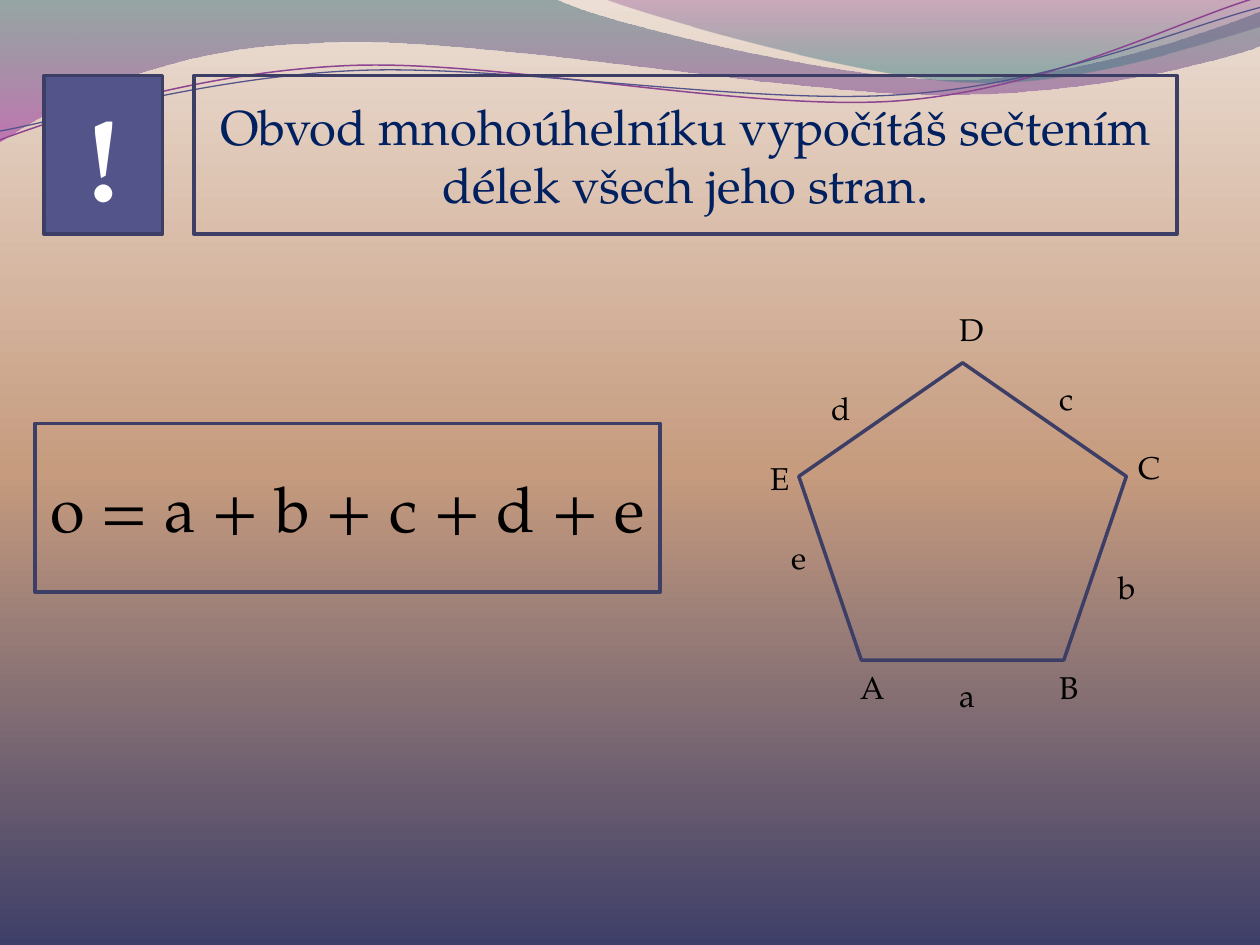
import math

from lxml import etree
from pptx import Presentation
from pptx import util as u
from pptx.dml.color import RGBColor
from pptx.enum import shapes, text
from pptx.oxml.ns import qn

THEME = {
    "font": "TeX Gyre Pagella",
    "accent": "53548A", "edge": "3D3E66", "orchid": "8D4490",
    "white": "FFFFFF", "navy": "002060", "black": "000000",
    "mark": 66, "rule": 28, "formula": 36, "label": 18, "outline": 2,
    "sky": [(0, "ECDED4", 100), (50, "C69B7E", 100), (100, "3E3F68", 100)],
    "wide_wave": [(0, "2D6368", 45), (100, "A530A9", 55)],
    "top_wave": [(0, "7F2F82", 30), (80, "2F7B82", 45)],
}

prs = Presentation()
prs.slide_width, prs.slide_height = u.Inches(10), u.Inches(7.5)
CELL = prs.slide_width / 10  # the slide is a grid of 10 columns by 7.5 rows
s = prs.slides.add_slide(prs.slide_layouts[6])


def set_gradient(fill, owner, stops):
    """Fill from top to bottom with (position %, colour, opacity %) stops."""
    fill.gradient()
    fill.gradient_angle = 270
    stop_list = owner.find(".//" + qn("a:gsLst"))
    for old in list(stop_list):
        stop_list.remove(old)
    for pos, colour, opacity in stops:
        gs = etree.SubElement(stop_list, qn("a:gs"), pos=str(pos * 1000))
        clr = etree.SubElement(gs, qn("a:srgbClr"), val=colour)
        if opacity < 100:
            etree.SubElement(clr, qn("a:alpha"), val=str(opacity * 1000))


def write(sp, words, size, colour, **formats):
    tf = sp.text_frame
    tf.word_wrap = True
    p = tf.paragraphs[0]
    for name, value in formats.items():
        setattr(tf if name == "vertical_anchor" else p, name, value)
    r = p.add_run()
    r.text = words
    font = {"name": THEME["font"], "size": u.Pt(THEME[size]), "bold": size == "mark"}
    for name, value in font.items():
        setattr(r.font, name, value)
    r.font.color.rgb = RGBColor.from_string(THEME[colour])


set_gradient(s.background.fill, s.element, THEME["sky"])

# Waves: style, line width, tilt and its centre, start point, then
# line ends (x, y) or curves (x1, y1, x2, y2, x, y)
TILT = -2.7
waves = [
    ("wide_wave", None, 0, (0, 0), (0, 0), [
        (4.4, -0.01), (4.76, 0.17, 6.64, 0.63, 7.58, 0.63),
        (8.53, 0.63, 9.58, 0.26, 10, 0.09), (10.01, 0.36),
        (9.83, 0.44, 8.7, 0.76, 7.46, 0.75), (6.22, 0.75, 3.82, 0.28, 2.57, 0.34),
        (1.29, 0.36, 0.46, 0.83, -0.01, 1.13), (0, 0)]),
    ("top_wave", None, 0, (0, 0), (4.79, -0.01), [
        (5.09, 0.11, 6.82, 0.62, 7.69, 0.65), (8.56, 0.69, 9.61, 0.32, 10, 0.21),
        (10, 0), (4.79, -0.01)]),
    ("orchid", 0.85, TILT, (4.99, 0.58), (0, 1.11), [
        (0.48, 0.93, 1.58, 0.57, 2.77, 0.52), (3.95, 0.47, 5.93, 0.89, 7.13, 0.8),
        (8.33, 0.71, 9.38, 0.15, 9.98, -0.02)]),
    ("accent", 0.75, TILT, (5, 0.59), (0, 1.04), [
        (0.47, 0.96, 1.64, 0.61, 2.83, 0.56), (4.03, 0.51, 5.97, 0.84, 7.17, 0.75),
        (8.36, 0.67, 9.41, 0.21, 10, 0.06)]),
]
for style, line_width, tilt, (cx, cy), start, segments in waves:
    points = [start]
    for seg in segments:
        points += zip(seg[::2], seg[1::2])
    cos, sin = math.cos(math.radians(-tilt)), math.sin(math.radians(-tilt))
    emu = [(round(CELL * (cx + (x - cx) * cos - (y - cy) * sin)),
            round(CELL * (cy + (x - cx) * sin + (y - cy) * cos))) for x, y in points]
    builder = s.shapes.build_freeform(*emu[0])
    builder.add_line_segments(emu[1:], close=line_width is None)
    sp = builder.convert_to_shape()
    sp.shadow.inherit = False
    sp.rotation = tilt

    # Join the three points of each curve into one Bezier segment
    ends = iter(sp.element.findall(".//" + qn("a:lnTo")))
    for seg in segments:
        first = next(ends)
        if len(seg) == 6:
            first.tag = qn("a:cubicBezTo")
            for extra in (next(ends), next(ends)):
                first.append(extra[0])
                extra.getparent().remove(extra)

    if line_width is None:
        set_gradient(sp.fill, sp.element, THEME[style])
        sp.line.fill.background()
    else:
        sp.fill.background()
        sp.line.color.rgb = RGBColor.from_string(THEME[style])
        sp.line.width = u.Pt(line_width)

# Outlined shapes: preset, cell box, fill, words, size, colour
RECT, PENTAGON = shapes.MSO_SHAPE.RECTANGLE, shapes.MSO_SHAPE.REGULAR_PENTAGON
outlined = [
    (RECT, (0.35, 0.6, 0.94, 1.26), "accent", "!", "mark", "white"),
    (RECT, (1.54, 0.6, 7.8, 1.26), None,
     "Obvod mnohoúhelníku vypočítáš sečtením délek všech jeho stran.", "rule", "navy"),
    (PENTAGON, (6.34, 2.88, 2.6, 2.36), None, None, None, None),
    (RECT, (0.28, 3.36, 4.96, 1.34), None, "o = a + b + c + d + e", "formula", "black"),
]
for preset, box, fill, words, size, colour in outlined:
    sp = s.shapes.add_shape(preset, *(round(v * CELL) for v in box))
    sp.shadow.inherit = False
    sp.line.color.rgb = RGBColor.from_string(THEME["edge"])
    sp.line.width = u.Pt(THEME["outline"])
    if fill:
        sp.fill.solid()
        sp.fill.fore_color.rgb = RGBColor.from_string(THEME[fill])
    else:
        sp.fill.background()
    if words:
        write(sp, words, size, colour, alignment=text.PP_ALIGN.CENTER,
              vertical_anchor=text.MSO_ANCHOR.MIDDLE)

# Sides and vertices of the pentagon: left, top, width
labels = {
    "c": (8.31, 2.96, 0.79), "a": (7.52, 5.32, 0.71), "b": (8.78, 4.46, 0.55),
    "d": (6.5, 3.04, 0.55), "e": (6.18, 4.22, 0.47),
    "D": (7.52, 2.41, 0.47), "C": (8.94, 3.51, 0.63), "B": (8.31, 5.25, 0.31),
    "A": (6.73, 5.25, 0.31), "E": (6.02, 3.59, 0.31),
}
for name, place in labels.items():
    sp = s.shapes.add_textbox(*(round(v * CELL) for v in (*place, 0.4)))
    write(sp, name, "label", "black")

prs.save("out.pptx")
